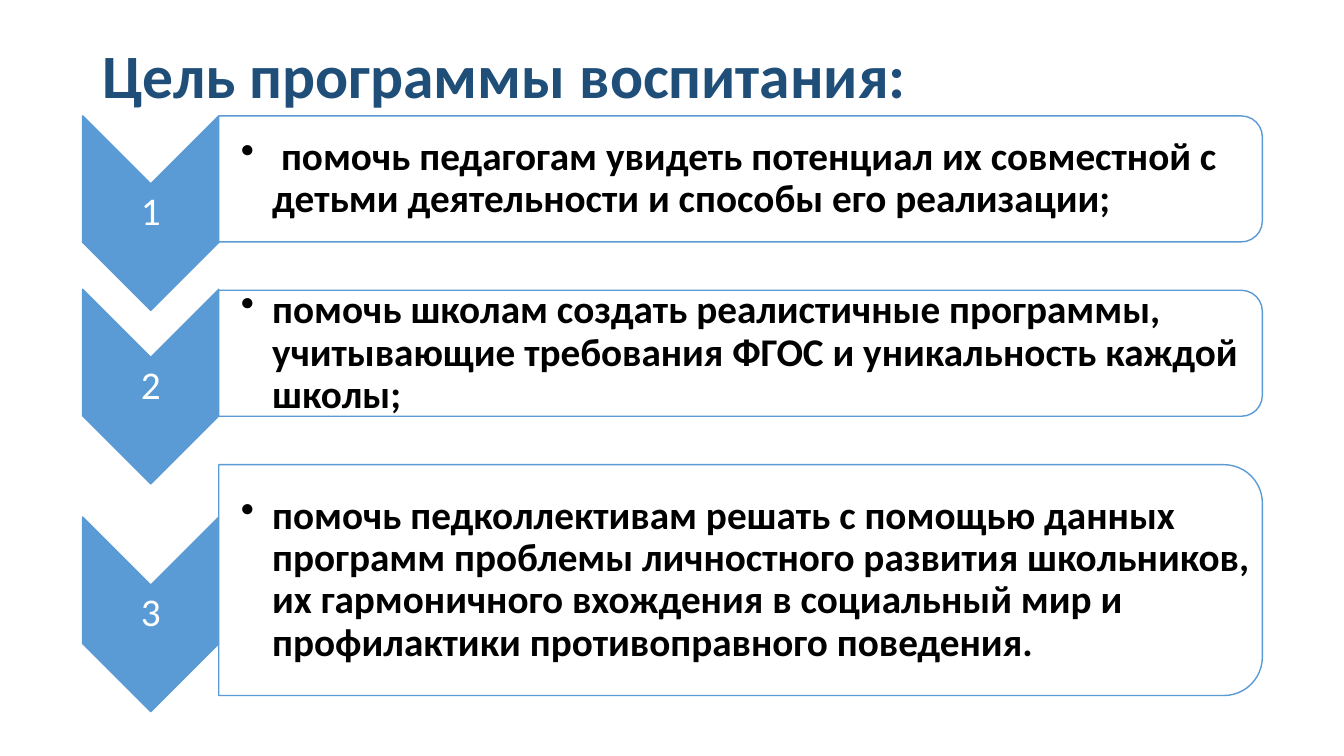
from lxml.etree import SubElement
from pptx import Presentation
from pptx.dml.color import RGBColor
from pptx.enum.shapes import MSO_SHAPE as SHAPE
from pptx.enum.text import MSO_ANCHOR as ANCHOR, MSO_AUTO_SIZE as AUTO_SIZE, PP_ALIGN as ALIGN
from pptx.oxml.ns import qn
from pptx.util import Emu, Pt

PX = 9144
FONT = "Calibri"
COLORS = {"title": "1F4E79", "blue": "5B9BD5", "white": "FFFFFF", "text": "000000"}
TITLE = "Цель программы воспитания:"
GOALS = [
    (125, " помочь педагогам увидеть потенциал их совместной с детьми деятельности и способы его реализации;"),
    (125, "помочь школам создать реалистичные программы, учитывающие требования ФГОС и уникальность каждой школы;"),
    (229, "помочь педколлективам решать с помощью данных программ проблемы личностного развития "
          "школьников, их гармоничного вхождения в социальный мир и профилактики противоправного поведения."),
]


def px(length):
    """Turn a length in px into EMU."""
    return Emu(round(length) * PX)


def color(name):
    """Return a palette colour."""
    return RGBColor.from_string(COLORS[name])


def style_paragraph(paragraph, size, color_name, bold=False, align=ALIGN.LEFT):
    """Format a whole paragraph."""
    paragraph.alignment = align
    paragraph.line_spacing = 0.9
    font = paragraph.font
    font.name, font.size, font.bold = FONT, Pt(size), bold
    font.color.rgb = color(color_name)


def add_turned_shape(slide, kind, left, top, width, height, fill):
    """Add a shape turned by 90 degrees that fills the given box."""
    shift = (width - height) / 2
    shape = slide.shapes.add_shape(kind, px(left + shift), px(top - shift), px(height), px(width))
    shape.rotation = 90
    shape.shadow.inherit = False
    shape.fill.solid()
    shape.fill.fore_color.rgb = color(fill)
    shape.line.color.rgb = color("blue")
    shape.line.width = Pt(1)
    return shape


def add_text(slide, text, left, top, width, height, inset=2):
    """Add a wrapped, vertically centred text box and return its paragraph."""
    frame = slide.shapes.add_textbox(px(left), px(top), px(width), px(height)).text_frame
    frame.word_wrap = True
    frame.vertical_anchor = ANCHOR.MIDDLE
    frame.margin_left = px(inset)
    frame.margin_top = frame.margin_right = frame.margin_bottom = px(2)
    paragraph = frame.paragraphs[0]
    paragraph.text = text
    return paragraph


def add_bullet(paragraph, indent):
    """Give a paragraph a hanging round bullet."""
    properties = paragraph._p.get_or_add_pPr()
    properties.set("marL", str(px(indent)))
    properties.set("indent", str(-px(indent)))
    SubElement(properties, qn("a:buChar"), char="•")


def add_title(slide, left, top, width, height):
    """Place the slide title."""
    title = slide.shapes.title
    title.left, title.top, title.width, title.height = map(px, (left, top, width, height))
    frame = title.text_frame
    frame.text = TITLE
    frame.auto_size = AUTO_SIZE.NONE
    frame.vertical_anchor = ANCHOR.TOP
    style_paragraph(frame.paragraphs[0], 44, "title", bold=True)


def add_marker(slide, number, left, top, width, height):
    """Draw a downward chevron with its number."""
    add_turned_shape(slide, SHAPE.CHEVRON, left, top, width, height, "blue")
    label = add_text(slide, str(number), left, top + width / 2, width, height - width)
    style_paragraph(label, 28, "white", align=ALIGN.CENTER)


def add_panel(slide, text, left, top, width, height):
    """Draw a panel rounded on the right with one bulleted goal."""
    panel = add_turned_shape(slide, SHAPE.ROUND_2_SAME_RECTANGLE, left, top, width, height, "white")
    fill_color = panel.fill._xPr.find(qn("a:solidFill"))[0]
    SubElement(fill_color, qn("a:alpha"), val="90000")
    corner = height * 0.049
    goal = add_text(slide, text, left, top + corner, width - corner, height - 2 * corner, inset=22)
    style_paragraph(goal, 28, "text", bold=True)
    add_bullet(goal, 31)


def add_goals(slide, left, top, width, marker_width=135, marker_height=193, gap=48):
    """Stack the numbered goals from top to bottom."""
    for number, (height, text) in enumerate(GOALS, 1):
        marker_top = top + height / 2 - 63
        add_marker(slide, number, left, marker_top, marker_width, marker_height)
        add_panel(slide, text, left + marker_width, top, width - marker_width, height)
        top += height + gap


def main():
    """Build and save the presentation."""
    presentation = Presentation()
    presentation.slide_width, presentation.slide_height = px(1333), px(750)
    slide = presentation.slides.add_slide(presentation.slide_layouts[5])
    add_title(slide, 92, 40, 1150, 145)
    add_goals(slide, 82, 115, 1170)
    presentation.save("out.pptx")


if __name__ == "__main__":
    main()
